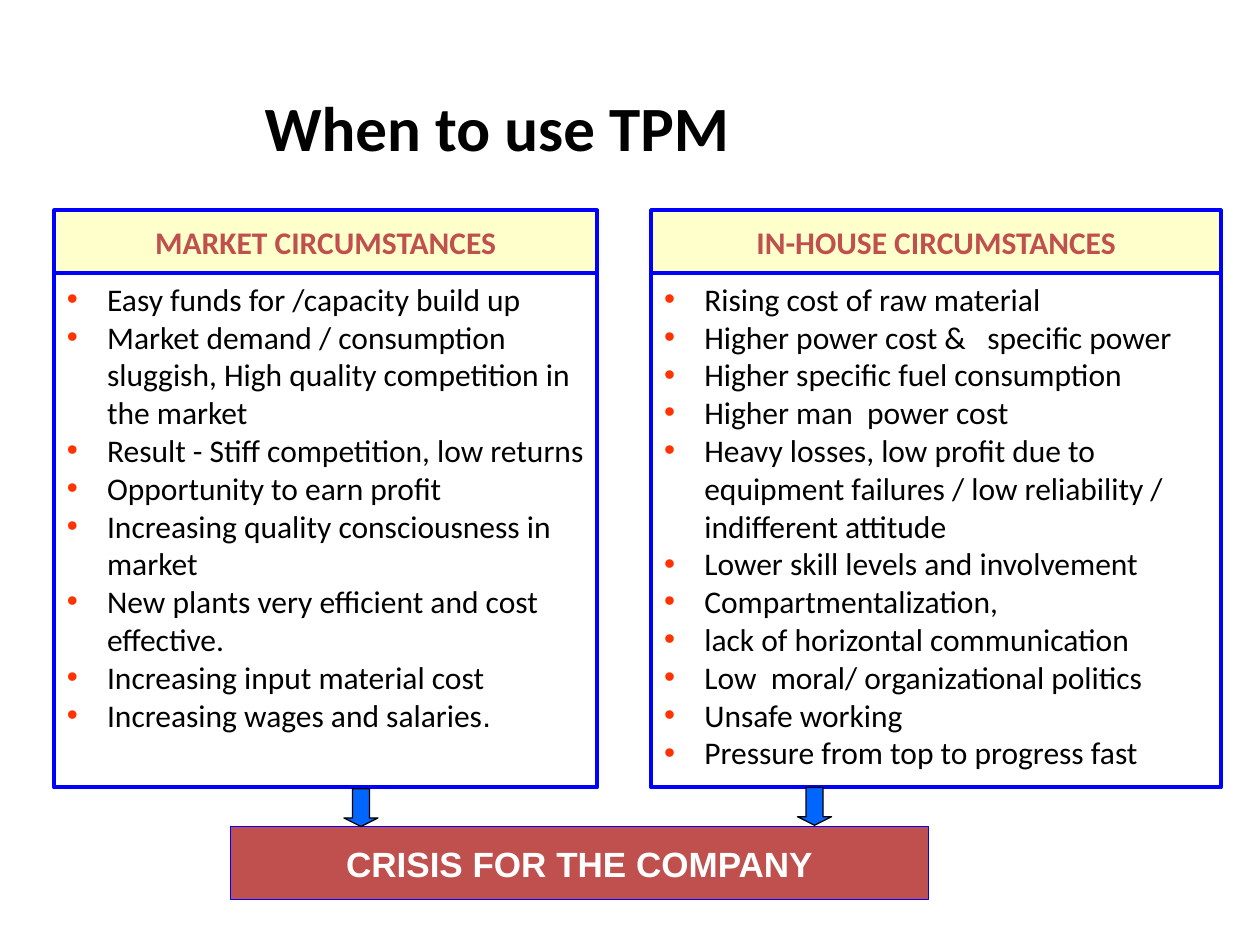
from lxml import etree
from pptx import Presentation
from pptx.dml.color import RGBColor
from pptx.enum.shapes import MSO_SHAPE
from pptx.enum.text import MSO_ANCHOR, MSO_AUTO_SIZE, PP_ALIGN
from pptx.oxml.ns import qn
from pptx.util import Inches, Pt

RECTANGLE, DOWN_ARROW = MSO_SHAPE.RECTANGLE, MSO_SHAPE.DOWN_ARROW
TOP, MIDDLE = MSO_ANCHOR.TOP, MSO_ANCHOR.MIDDLE
LEFT, CENTER = PP_ALIGN.LEFT, PP_ALIGN.CENTER
NO_AUTOFIT = MSO_AUTO_SIZE.NONE
COMPARISON_LAYOUT = 4

COLORS = {
    "text": "000000", "white": "FFFFFF", "cream": "FFFFCC", "red": "C0504D",
    "border": "0000FF", "arrow": "0066FF", "bullet": "FF3300",
}

COLUMNS = [
    (0.43, 4.31, "MARKET CIRCUMSTANCES", [
        "Easy funds for /capacity build up",
        "Market demand / consumption sluggish, High quality competition in the market",
        "Result - Stiff competition, low returns",
        "Opportunity to earn profit",
        "Increasing quality consciousness in market",
        "New plants very efficient and cost  effective.",
        "Increasing input material cost",
        "Increasing wages and salaries",
    ]),
    (5.17, 4.52, "IN-HOUSE CIRCUMSTANCES", [
        "Rising cost of raw material",
        "Higher power cost &   specific power",
        "Higher specific fuel consumption",
        "Higher man  power cost",
        "Heavy losses, low profit due to equipment failures / low reliability / indifferent attitude",
        "Lower skill levels and involvement",
        "Compartmentalization,",
        "lack of horizontal communication",
        "Low  moral/ organizational politics",
        "Unsafe working",
        "Pressure from top to progress fast",
    ]),
]


class SlideBuilder:
    """Holds the style and the current slide, and adds each kind of element."""

    def __init__(self, slide, font="Calibri"):
        self.slide = slide
        self.font = font

    def place(self, shape, left, top, width, height):
        shape.left, shape.top = Inches(left), Inches(top)
        shape.width, shape.height = Inches(width), Inches(height)

    def paint(self, shape, fill, line, weight):
        shape.fill.solid()
        shape.fill.fore_color.rgb = RGBColor.from_string(COLORS[fill])
        shape.line.color.rgb = RGBColor.from_string(COLORS[line])
        shape.line.width = Pt(weight)

    def style_run(self, run, size, color="text", bold=False, font=None):
        run.font.name = font or self.font
        run.font.size = Pt(size)
        run.font.bold = bold
        run.font.color.rgb = RGBColor.from_string(COLORS[color])

    def set_text(self, shape, lines, size, color="text", bold=False, align=LEFT,
                 anchor=TOP, wrap=True, font=None):
        frame = shape.text_frame
        frame.text = "\n".join(lines)
        frame.auto_size = NO_AUTOFIT
        frame.word_wrap = wrap
        frame.vertical_anchor = anchor
        for paragraph in frame.paragraphs:
            paragraph.alignment = align
            paragraph.space_before = Pt(0)
            for run in paragraph.runs:
                self.style_run(run, size, color, bold, font)

    def add_bullet(self, paragraph):
        properties = paragraph._p.get_or_add_pPr()
        properties.set("marL", str(Inches(0.32)))
        properties.set("indent", str(-Inches(0.32)))
        bullet_color = etree.SubElement(properties, qn("a:buClr"))
        etree.SubElement(bullet_color, qn("a:srgbClr"), val=COLORS["bullet"])
        etree.SubElement(properties, qn("a:buFont"), typeface="Arial")
        etree.SubElement(properties, qn("a:buChar"), char="•")

    def title(self, text, *box):
        heading = self.slide.shapes.title
        self.place(heading, *box)
        self.set_text(heading, [text], 36, bold=True)

    def header(self, placeholder, text, *box):
        self.place(placeholder, *box)
        self.paint(placeholder, "cream", "border", 2.25)
        self.set_text(placeholder, [text], 18, "red", True, CENTER, MIDDLE, False)

    def bullet_list(self, placeholder, items, *box):
        self.place(placeholder, *box)
        self.paint(placeholder, "white", "border", 2.25)
        self.set_text(placeholder, items, 18)
        for paragraph in placeholder.text_frame.paragraphs:
            self.add_bullet(paragraph)

    def preset(self, kind, fill, line, *box):
        shape = self.slide.shapes.add_shape(kind, *map(Inches, box))
        shape.shadow.inherit = False
        self.paint(shape, fill, line, 0.75)
        return shape

    def banner(self, text, *box):
        crisis = self.preset(RECTANGLE, "red", "border", *box)
        self.set_text(crisis, [text], 20, "white", True, CENTER, MIDDLE, False, "Arial")

    def down_arrow(self, left, top):
        arrow = self.preset(DOWN_ARROW, "arrow", "text", left, top, 0.27, 0.3)
        arrow.adjustments[0], arrow.adjustments[1] = 0.5, 0.25


def main():
    deck = Presentation()
    deck.slide_width, deck.slide_height = Inches(10), Inches(7.5)
    slide = deck.slides.add_slide(deck.slide_layouts[COMPARISON_LAYOUT])
    builder = SlideBuilder(slide)
    builder.title("When to use TPM", 2, 0.65, 6.08, 0.71)

    _, *bodies = slide.placeholders
    for (left, width, heading, items), header, details in zip(
            COLUMNS, bodies[::2], bodies[1::2]):
        builder.bullet_list(details, items, left, 2.17, width, 4.08)
        builder.header(header, heading, left, 1.67, width, 0.5)

    market_details = bodies[1]
    full_stop = market_details.text_frame.paragraphs[-1].add_run()
    full_stop.text = "."
    builder.style_run(full_stop, 18, font="Arial")

    builder.banner("CRISIS FOR THE COMPANY", 1.83, 6.56, 5.54, 0.58)
    builder.down_arrow(2.73, 6.26)
    builder.down_arrow(6.33, 6.25)
    deck.save("out.pptx")


if __name__ == "__main__":
    main()
